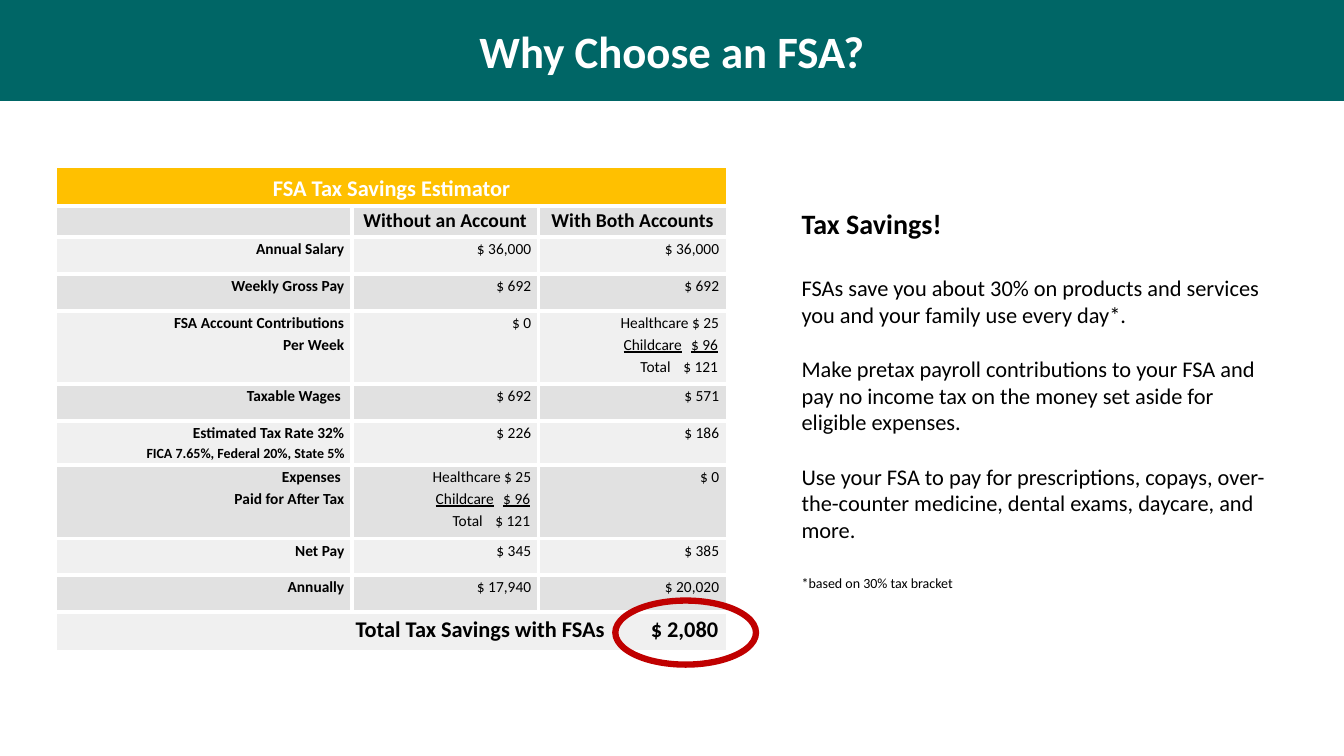
from lxml import etree
from pptx import Presentation
from pptx import util as u
from pptx.dml import color
from pptx.enum import shapes, text
from pptx.oxml import ns

CENTER, RIGHT, LEFT = text.PP_ALIGN.CENTER, text.PP_ALIGN.RIGHT, text.PP_ALIGN.LEFT
HEADER_FILL, DARK_FILL, LIGHT_FILL = "FFC000", "E1E1E1", "F0F0F0"
WHITE, BLACK = "FFFFFF", "000000"


def px(value):
    return u.Emu(value * 9525)


def rgb(value):
    return color.RGBColor.from_string(value)


def apply(target, values):
    for name, value in values.items():
        setattr(target, name, value)


class SlideBuilder:
    """Holds the style and the current slide, and adds each kind of element."""

    font_name = "Calibri"
    cell_margin = 7
    border_points = 3

    def __init__(self, presentation):
        self.slide = presentation.slides.add_slide(presentation.slide_layouts[5])

    def fill_paragraph(self, paragraph, content, size, hue=BLACK, bold=False,
                       underline=False, stops=(), **layout):
        apply(paragraph, layout)
        if stops:
            properties = paragraph._p.get_or_add_pPr()
            tab_list = etree.SubElement(properties, ns.qn("a:tabLst"))
            for position, side in stops:
                etree.SubElement(tab_list, ns.qn("a:tab"), pos=str(px(position)), algn=side)
        pieces = ["\t", content[1:]] if content.startswith("\t") else [content]
        for piece in pieces:
            run = paragraph.add_run()
            run.text = piece
            apply(run.font, {"name": self.font_name, "size": u.Pt(size), "bold": bold,
                             "underline": underline and piece != "\t"})
            run.font.color.rgb = rgb(hue)

    def title(self, content, box, fill):
        title = self.slide.shapes.title
        apply(title, dict(zip(("left", "top", "width", "height"), map(px, box))))
        title.fill.solid()
        title.fill.fore_color.rgb = rgb(fill)
        apply(title.text_frame, {"vertical_anchor": text.MSO_ANCHOR.MIDDLE,
                                 "auto_size": text.MSO_AUTO_SIZE.NONE, "word_wrap": True})
        self.fill_paragraph(title.text_frame.paragraphs[0], content, 32, WHITE, True,
                            alignment=CENTER)

    def text_box(self, paragraphs, box):
        frame = self.slide.shapes.add_textbox(*map(px, box)).text_frame
        frame.word_wrap = True
        for index, (content, size, bold, gap) in enumerate(paragraphs):
            paragraph = frame.add_paragraph() if index else frame.paragraphs[0]
            self.fill_paragraph(paragraph, content, size, bold=bold, space_before=u.Pt(gap))

    def ellipse(self, box, hue, points):
        ellipse = self.slide.shapes.add_shape(shapes.MSO_SHAPE.OVAL, *map(px, box))
        ellipse.shadow.inherit = False
        ellipse.fill.background()
        ellipse.line.color.rgb = rgb(hue)
        ellipse.line.width = u.Pt(points)

    def table(self, corner, widths, heights):
        size = (sum(widths), sum(heights))
        frame = self.slide.shapes.add_table(len(heights), len(widths), *map(px, corner + size))
        table = frame.table
        apply(table, {"first_row": False, "horz_banding": False})
        for column, width in zip(table.columns, widths):
            column.width = px(width)
        for row, height in zip(table.rows, heights):
            row.height = px(height)
        return table

    def cell(self, cell, lines, fill, sides, anchor=text.MSO_ANCHOR.TOP):
        margin = px(self.cell_margin)
        apply(cell, {"margin_left": margin, "margin_right": margin, "margin_top": 0,
                     "margin_bottom": 0, "vertical_anchor": anchor})
        properties = cell._tc.get_or_add_tcPr()
        for side in sides:
            line = etree.SubElement(properties, ns.qn("a:ln" + side),
                                    w=str(u.Pt(self.border_points)))
            solid = etree.SubElement(line, ns.qn("a:solidFill"))
            etree.SubElement(solid, ns.qn("a:srgbClr"), val=WHITE)
        cell.fill.solid()
        cell.fill.fore_color.rgb = rgb(fill)
        for index, line in enumerate(lines):
            frame = cell.text_frame
            paragraph = frame.add_paragraph() if index else frame.paragraphs[0]
            self.fill_paragraph(paragraph, line_spacing=1.15, **line)


def amount_lines(content, width):
    if content != "breakdown":
        return [{"content": content, "size": 11, "alignment": RIGHT}]
    inner = width - 2 * SlideBuilder.cell_margin
    tabbed = [{"content": f"\t{name}\t{value}", "size": 11, "underline": underline,
               "alignment": LEFT, "stops": [(inner - extent, "l"), (inner - 1, "r")]}
              for name, value, extent, underline in
              [("Childcare", "$ 96", 91, True), ("Total", "$ 121", 75, False)]]
    return amount_lines("Healthcare $ 25", width) + tabbed


def add_estimator(builder):
    entries = [
        (["Annual Salary"], "$ 36,000", "$ 36,000", 35),
        (["Weekly Gross Pay"], "$ 692", "$ 692", 35),
        (["FSA Account Contributions", "Per Week"], "$ 0", "breakdown", 70),
        (["Taxable Wages "], "$ 692", "$ 571", 35),
        (["Estimated Tax Rate 32%", "FICA 7.65%, Federal 20%, State 5%"], "$ 226", "$ 186", 42),
        (["Expenses ", "Paid for After Tax"], "breakdown", "$ 0", 70),
        (["Net Pay"], "$ 345", "$ 385", 35),
        (["Annually"], "$ 17,940", "$ 20,020", 35),
    ]
    widths = (281, 178, 179)
    heights = [37, 30] + [entry[-1] for entry in entries] + [37]
    table = builder.table((54, 159), widths, heights)
    last = len(heights) - 1
    for row in (0, last):
        table.cell(row, 0).merge(table.cell(row, 2))

    banner = {"content": "FSA Tax Savings Estimator", "size": 16, "hue": WHITE,
              "bold": True, "alignment": CENTER}
    builder.cell(table.cell(0, 0), [banner], HEADER_FILL, "B", text.MSO_ANCHOR.MIDDLE)

    column_sides = ("RTB", "LRTB", "LTB")
    for column, heading in enumerate(["", "Without an Account", "With Both Accounts"]):
        line = {"content": heading, "size": 14, "bold": True, "alignment": CENTER}
        builder.cell(table.cell(1, column), [line], DARK_FILL, column_sides[column])

    for row, (labels, without, both, _) in enumerate(entries, 2):
        label_lines = [{"content": label, "size": 10 if label.startswith("FICA") else 11,
                        "bold": True, "alignment": RIGHT} for label in labels]
        contents = [label_lines, amount_lines(without, widths[1]), amount_lines(both, widths[2])]
        fill = DARK_FILL if row % 2 else LIGHT_FILL
        for column, lines in enumerate(contents):
            builder.cell(table.cell(row, column), lines, fill, column_sides[column])

    total = {"content": "\tTotal Tax Savings with FSAs\t$ 2,080", "size": 16, "bold": True,
             "alignment": LEFT, "stops": [(515, "r"), (623, "r")]}
    builder.cell(table.cell(last, 0), [total], LIGHT_FILL, "T")


def main():
    presentation = Presentation()
    apply(presentation, {"slide_width": px(1280), "slide_height": px(720)})
    builder = SlideBuilder(presentation)
    builder.title("Why Choose an FSA?", (0, 0, 1280, 96), "006666")
    builder.text_box([
        ("Tax Savings!", 20, True, 0),
        ("FSAs save you about 30% on products and services you and your family "
         "use every day*.", 16, False, 24),
        ("Make pretax payroll contributions to your FSA and pay no income tax on the "
         "money set aside for eligible expenses.", 16, False, 19.5),
        ("Use your FSA to pay for prescriptions, copays, over-the-counter medicine, "
         "dental exams, daycare, and more.", 16, False, 19.5),
        ("*based on 30% tax bracket", 10, False, 22),
    ], (754, 192, 460, 378))
    add_estimator(builder)
    builder.ellipse((586, 572, 134, 61), "C00000", 4.5)
    presentation.save("out.pptx")


if __name__ == "__main__":
    main()
